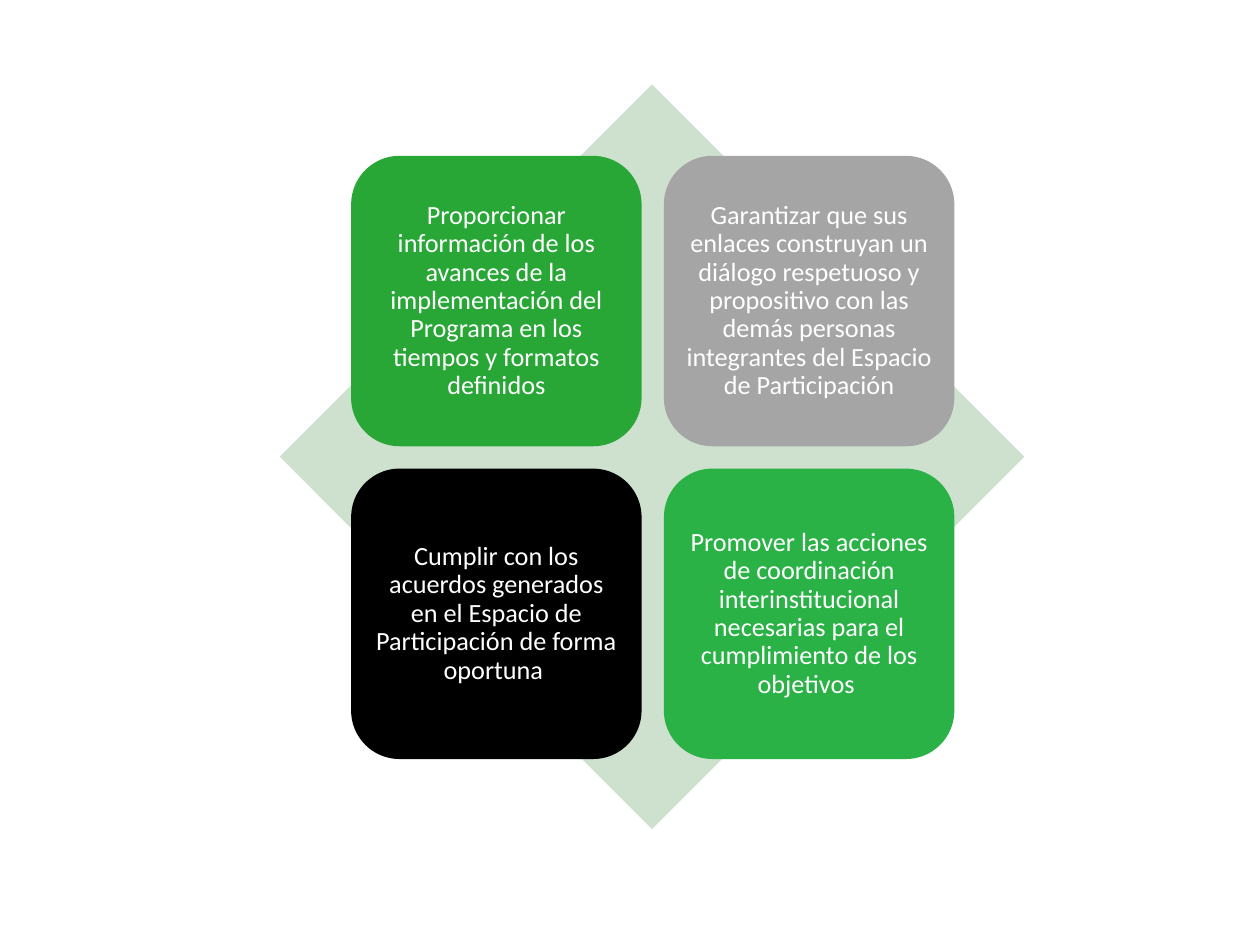
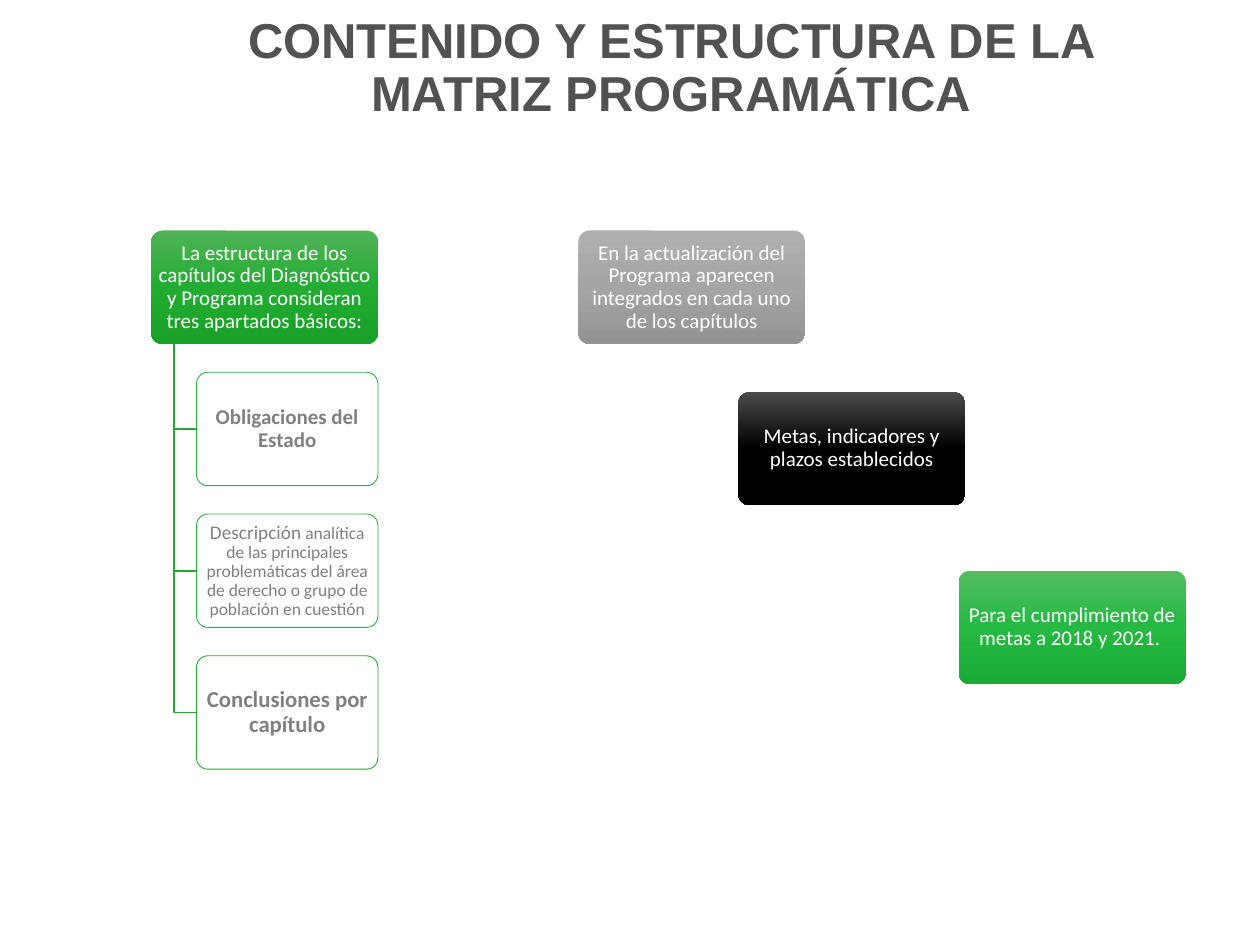
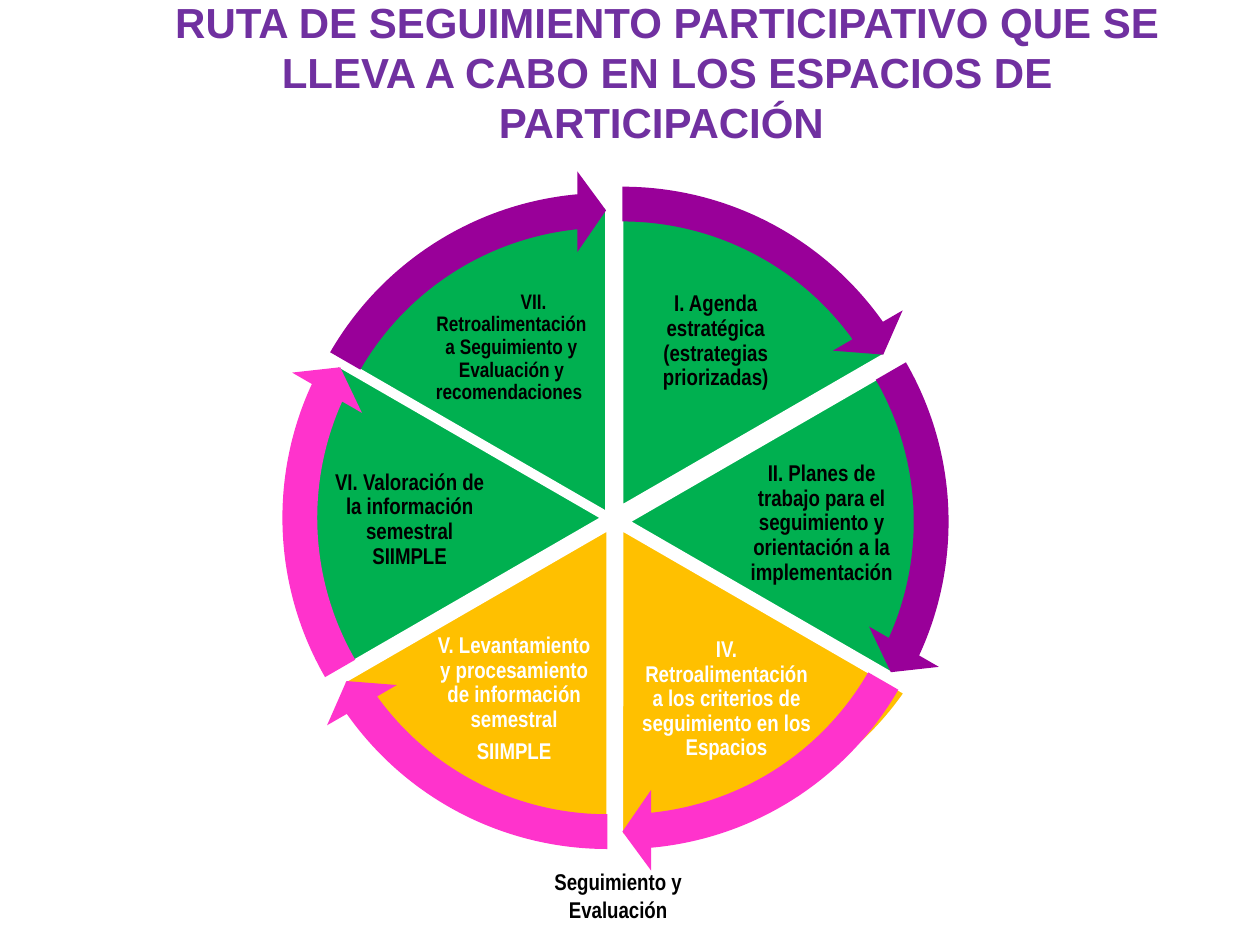
from copy import deepcopy

from lxml import etree
from pptx import Presentation
from pptx import util as u
from pptx.dml.color import RGBColor
from pptx.enum import shapes, text
from pptx.oxml.ns import qn

WIDE, HIGH = 10, 7.5
KIND = shapes.MSO_SHAPE
HUES = {
    "white": "FFFFFF", "black": "000000", "slate": "525252", "gray": "808080",
    "mint": "CDE1CE", "green": "28A737", "silver": "A5A5A5", "lime": "2BB246",
    "violet": "7030A0", "leaf": "00B050", "amber": "FFC000",
    "plum": "990099", "pink": "FF33CC", "forest": "1E7D29",
}
FADES = {
    "green": ("51B358", "22AD32", "18A028"),
    "silver": ("AFAFAF", "A5A5A5", "939393"),
    "black": ("4B4B4B", "000000", "000000"),
    "lime": ("53BD61", "24B942", "1AAA37"),
}

TILES = [
    ("green", "Proporcionar información de los avances de la implementación del "
     "Programa en los tiempos y formatos definidos"),
    ("silver", "Garantizar que sus enlaces construyan un diálogo respetuoso y "
     "propositivo con las demás personas integrantes del Espacio de Participación"),
    ("black", "Cumplir con los acuerdos generados en el Espacio de Participación "
     "de forma oportuna "),
    ("lime", "Promover las acciones de coordinación interinstitucional necesarias "
     "para el cumplimiento de los objetivos "),
]
HEAD = ("La estructura de los capítulos del Diagnóstico y Programa consideran "
        "tres apartados básicos:")
PARTS = [
    ("lime", "Obligaciones del Estado", 12, True),
    ("lime", [("Descripción", 11),
              (" analítica de las principales problemáticas del área de derecho "
               "o grupo de población en cuestión", 10)], 10, False),
    ("green", "Conclusiones por capítulo", 13, True),
]
STEPS = [
    ("silver", 0, 0, "En la actualización del Programa aparecen integrados en cada "
     "uno de los capítulos"),
    ("black", 1.27, 1.28, "Metas, indicadores y plazos establecidos"),
    ("lime", 3.02, 2.7, "Para el cumplimiento de metas a 2018 y 2021. "),
]
WEDGES = [
    dict(fill="leaf", arc="plum", nudge=(.04, -.09), label=(.15, -1.88, 1.26, .98),
         words=["I. Agenda estratégica (estrategias priorizadas)"]),
    dict(fill="leaf", arc="plum", nudge=(.1, .04), label=(.96, -.42, 1.32, .95),
         words=["II. Planes de trabajo para el seguimiento y orientación a la "
                "implementación"]),
    dict(fill="amber", arc="pink", nudge=(.04, .11), label=(.17, .96, 1.39, .98),
         span=5.3, ink="white",
         words=["IV. Retroalimentación a los criterios de seguimiento en los Espacios"]),
    dict(fill="amber", arc="pink", nudge=(-.08, .11), label=(-1.45, .96, 1.26, .98),
         ink="white",
         words=["V. Levantamiento y procesamiento de información semestral", "SIIMPLE"]),
    dict(fill="leaf", arc="pink", nudge=(-.13, .01), label=(-2.31, -.45, 1.32, .95),
         words=["VI. Valoración de la información semestral SIIMPLE"]),
    dict(fill="leaf", arc="plum", nudge=(-.09, -.04), label=(-1.47, -1.83, 1.26, .98),
         size=12, indent=.35,
         words=["VII. Retroalimentación a Seguimiento y Evaluación y recomendaciones "]),
]


def tint(name):
    """Return the named colour."""
    return RGBColor.from_string(HUES[name])


def inches(*sides):
    """Turn lengths in inches into slide units."""
    return [u.Inches(side) for side in sides]


def trim(run, hue):
    """Outline the letters of a run."""
    line = etree.Element(qn("a:ln"), w=str(u.Pt(1)))
    fill = etree.SubElement(line, qn("a:solidFill"))
    etree.SubElement(fill, qn("a:srgbClr"), val=HUES[hue])
    run.font._element.insert(0, line)


def write(shape, *paras, size, font="Calibri", ink="white", bold=False, pads=(.1, .05),
          lead=.9, indent=0, edge=None, anchor=text.MSO_ANCHOR.MIDDLE):
    """Fill a shape with centred paragraphs of plain or mixed runs."""
    frame = shape.text_frame
    frame.word_wrap = True
    frame.vertical_anchor = anchor
    frame.margin_left = frame.margin_right = u.Inches(pads[0])
    frame.margin_top = frame.margin_bottom = u.Inches(pads[1])
    for i, words in enumerate(paras):
        para = frame.add_paragraph() if i else frame.paragraphs[0]
        para.alignment = text.PP_ALIGN.CENTER
        para.line_spacing = lead
        if i:
            para.space_before = u.Pt(round(.35 * size, 1))
        if indent:
            para._p.get_or_add_pPr().set("indent", str(u.Inches(indent)))
        for part, points in [(words, size)] if isinstance(words, str) else words:
            run = para.add_run()
            run.text = part
            run.font.size = u.Pt(points)
            run.font.name = font
            run.font.bold = bold
            run.font.color.rgb = tint(ink)
            if edge:
                trim(run, edge)


def label(slide, box, *paras, **style):
    """Add a text box."""
    write(slide.shapes.add_textbox(*inches(*box)), *paras, **style)


def stroke(shape, hue, points):
    """Set a shape's line."""
    shape.line.color.rgb = tint(hue)
    shape.line.width = u.Pt(points)


def draw(slide, kind, box, fill, edge=None, points=1, bends=()):
    """Add a flat preset shape."""
    shape = slide.shapes.add_shape(kind, *inches(*box))
    shape.shadow.inherit = False
    for i, bend in enumerate(bends):
        shape.adjustments[i] = bend
    shape.fill.solid()
    shape.fill.fore_color.rgb = tint(fill)
    if edge:
        stroke(shape, edge, points)
    else:
        shape.line.fill.background()
    return shape


def fade(shape, name):
    """Give a shape a three-stop fill from top to bottom."""
    shape.fill.gradient()
    shape.fill.gradient_angle = 270
    stops = shape._element.spPr.find(qn("a:gradFill")).find(qn("a:gsLst"))
    stops.append(deepcopy(stops[0]))
    for i, (stop, code) in enumerate(zip(shape.fill.gradient_stops, FADES[name])):
        stop.position = i / 2
        stop.color.rgb = RGBColor.from_string(code)


def title(slide, box, words, **style):
    """Add a bold heading."""
    label(slide, box, words, font="Arial", bold=True, **style)


def card(slide, box, words, fill="white", edge=None, shade=None, **style):
    """Add a small rounded card with text."""
    shape = draw(slide, KIND.ROUNDED_RECTANGLE, box, fill, edge, .5, [.1])
    if shade:
        fade(shape, shade)
    write(shape, words, pads=(.03, .02), **style)


def matrix(slide, box):
    """Draw a diamond behind a two by two grid of tiles."""
    left, top, side, _ = box
    draw(slide, KIND.DIAMOND, box, "mint")
    tile, step, inset = side * .39, side * .42, side * .096
    for i, (hue, words) in enumerate(TILES):
        row, col = divmod(i, 2)
        spot = (left + inset + col * step, top + inset + row * step, tile, tile)
        write(draw(slide, KIND.ROUNDED_RECTANGLE, spot, hue), words,
              size=15, pads=(.06, .06))


def elbow(slide, left, top, wide, high):
    """Draw a line down and then right."""
    x, y, right, foot = inches(left, top, left + wide, top + high)
    path = slide.shapes.build_freeform(x, y)
    path.add_line_segments([(x, foot), (right, foot)], close=False)
    line = path.convert_to_shape()
    line.shadow.inherit = False
    line.fill.background()
    stroke(line, "green", 1)


def tree(slide, box):
    """Draw a head card with its parts hung below."""
    left, top, wide, high = box
    pitch, stem = high * 1.25, wide * .1
    card(slide, box, HEAD, shade="green", size=12)
    for i, (edge, words, size, bold) in enumerate(PARTS, 1):
        elbow(slide, left + stem, top + high, stem, i * pitch - high / 2)
        spot = (left + 2 * stem, top + i * pitch, wide * .8, high)
        card(slide, spot, words, edge=edge, ink="gray", size=size, bold=bold)


def stairs(slide, box):
    """Draw cards going down to the right."""
    left, top, wide, high = box
    for hue, across, down, words in STEPS:
        card(slide, (left + across, top + down, wide, high), words, shade=hue, size=12)


def wheel(slide, box):
    """Draw six labelled wedges with arrows around them."""
    left, top, side, _ = box
    mid, axis = left + side / 2, top + side / 2
    turn, first, full = 36, 162, 216

    def around(nudge, wide, high):
        """Centre a box on the nudged hub."""
        return mid + nudge[0] - wide / 2, axis + nudge[1] - high / 2, wide, high

    for i, item in enumerate(WEDGES):
        start = (first + i * turn) % full
        stop = (start + turn) % full
        spot = around(item["nudge"], item.get("span", side), side)
        draw(slide, KIND.PIE, spot, item["fill"], "white", 1, [start, stop])
        x, y, wide, high = item["label"]
        label(slide, (mid + x, axis + y, wide, high), *item["words"],
              size=item.get("size", 13), font="Arial Narrow", bold=True,
              ink=item.get("ink", "black"), pads=(.02, .02),
              indent=item.get("indent", 0))
    for i, item in enumerate(WEDGES):
        start = (first + i * turn) % full
        bends = [.051, 3.275, (start + 32.725) % full, start, .059]
        spot = around(item["nudge"], side + .6, side + .6)
        draw(slide, KIND.CIRCULAR_ARROW, spot, item["arc"], bends=bends)


def main():
    """Build the three slides."""
    deck = Presentation()
    deck.slide_width, deck.slide_height = inches(WIDE, HIGH)
    duties, plan, route = [deck.slides.add_slide(deck.slide_layouts[6])
                           for _ in range(3)]

    matrix(duties, (2.22, .67, 5.91, 5.91))

    title(plan, (1.42, -.18, 7.81, 1.45),
          "CONTENIDO Y ESTRUCTURA DE LA MATRIZ PROGRAMÁTICA",
          size=28, ink="slate", edge="forest")
    tree(plan, (1.2, 1.83, 1.8, .9))
    stairs(plan, (4.59, 1.83, 1.8, .9))

    title(route, (.99, -.08, 8.61, 1.31),
          "RUTA DE SEGUIMIENTO PARTICIPATIVO QUE SE LLEVA A CABO EN LOS "
          "ESPACIOS DE PARTICIPACIÓN ",
          size=24, ink="violet", edge="slate", lead=1, anchor=text.MSO_ANCHOR.TOP)
    wheel(route, (2.49, 1.69, 4.82, 4.82))
    label(route, (4.15, 6.84, 1.51, .54), "Seguimiento y Evaluación", size=13,
          font="Arial Narrow", ink="black", bold=True, lead=1,
          anchor=text.MSO_ANCHOR.TOP)

    deck.save("out.pptx")


if __name__ == "__main__":
    main()
